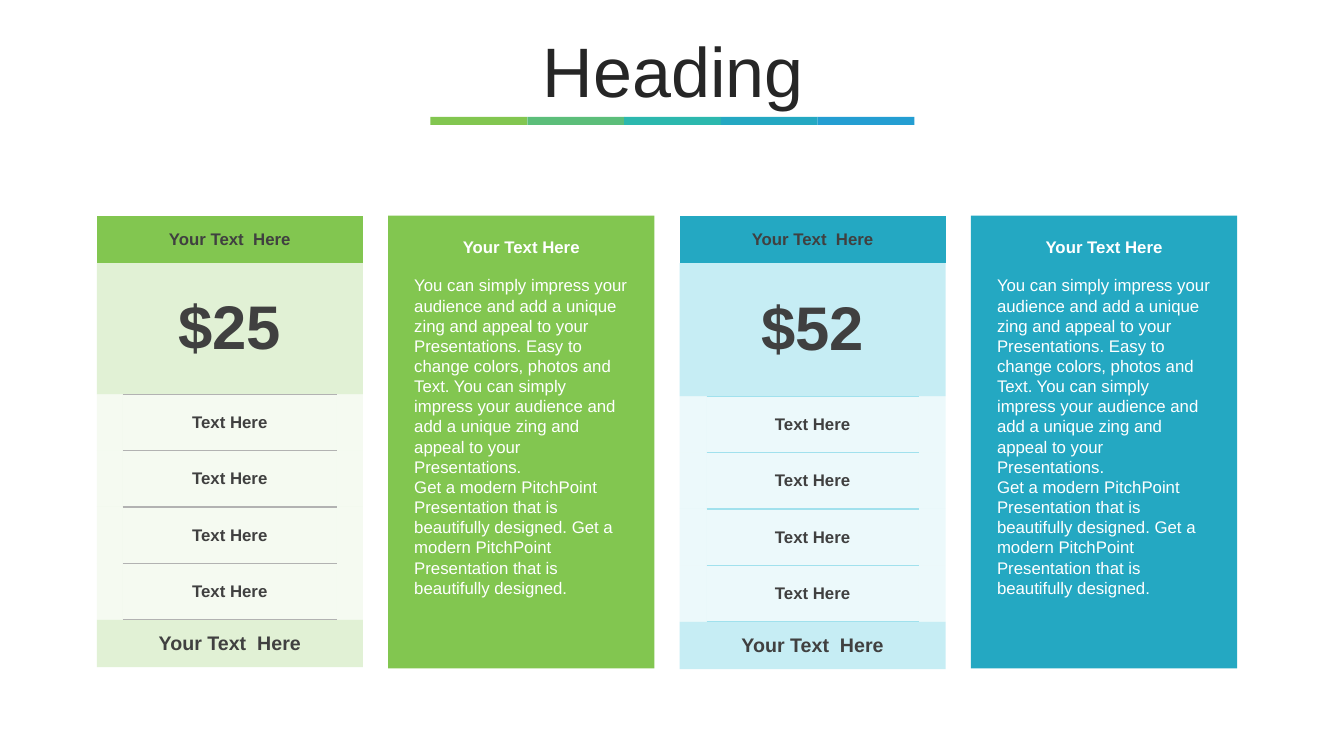
from dataclasses import dataclass

from lxml import etree
from pptx import Presentation
from pptx.dml.color import RGBColor
from pptx.enum.shapes import MSO_SHAPE
from pptx.enum.text import MSO_ANCHOR, MSO_AUTO_SIZE, PP_ALIGN
from pptx.oxml.ns import qn
from pptx.util import Inches, Pt

RECTANGLE = MSO_SHAPE.RECTANGLE
MIDDLE = MSO_ANCHOR.MIDDLE
LEFT, CENTER = PP_ALIGN.LEFT, PP_ALIGN.CENTER
NO_FIT, GROW = MSO_AUTO_SIZE.NONE, MSO_AUTO_SIZE.SHAPE_TO_FIT_TEXT

FONT = "Arial"
WHITE = RGBColor(0xFF, 0xFF, 0xFF)
TITLE_GRAY = RGBColor(0x26, 0x26, 0x26)
TEXT_GRAY = RGBColor(0x40, 0x40, 0x40)
RULE_GRAY = RGBColor(0xB2, 0xB2, 0xB2)
GREEN = RGBColor(0x82, 0xC6, 0x50)
MID_GREEN = RGBColor(0xB4, 0xDD, 0x96)
PALE_GREEN = RGBColor(0xCD, 0xE8, 0xB9)
CYAN = RGBColor(0x24, 0xA8, 0xC2)
MID_CYAN = RGBColor(0x71, 0xD2, 0xE5)
PALE_CYAN = RGBColor(0xA1, 0xE1, 0xED)
BAR_COLORS = (GREEN, RGBColor(0x5C, 0xBE, 0x7A), RGBColor(0x2C, 0xB8, 0xAE),
              CYAN, RGBColor(0x24, 0x9E, 0xD2))

# Layout in inches
BAR_LEFT, BAR_TOP, BAR_WIDTH, BAR_HEIGHT = 4.27, 1.16, 0.96, 0.08
COLUMN_LEFT, COLUMN_PITCH = 0.96, 2.89
COLUMN_TOP, COLUMN_WIDTH, COLUMN_HEIGHT = 2.14, 2.64, 4.49
TEXT_INSET, TEXT_WIDTH = 0.16, 2.32
BAND_HEIGHT, FEATURE_HEIGHT, FEATURE_COUNT = 0.47, 0.56, 4

NO_STYLE_NO_GRID = "{2D5ABB26-0587-4C30-8999-92F81FD0307C}"
CARD_TEXT = [
    "You can simply impress your audience and add a unique zing and appeal to your "
    "Presentations. Easy to change colors, photos and Text. You can simply impress your "
    "audience and add a unique zing and appeal to your Presentations.",
    "Get a modern PitchPoint  Presentation that is beautifully designed. "
    "Get a modern PitchPoint  Presentation that is beautifully designed.",
]


@dataclass
class Plan:
    price: str
    main: RGBColor
    middle: RGBColor
    pale: RGBColor
    rule: RGBColor
    price_height: float
    margin_width: float


PLANS = [
    Plan("$25", GREEN, MID_GREEN, PALE_GREEN, RULE_GRAY, 1.3, 0.26),
    Plan("$52", CYAN, MID_CYAN, PALE_CYAN, PALE_CYAN, 1.32, 0.27),
]


def write_text(frame, *texts: str, size: float = 12, color: RGBColor = TEXT_GRAY,
               bold: bool = False, align=CENTER) -> None:
    for index, text in enumerate(texts):
        paragraph = frame.add_paragraph() if index else frame.paragraphs[0]
        paragraph.alignment = align
        run = paragraph.add_run()
        run.text = text
        run.font.name = FONT
        run.font.size = Pt(size)
        run.font.bold = bold
        run.font.color.rgb = color


def add_rectangle(slide, left: float, top: float, width: float, height: float,
                  color: RGBColor) -> None:
    shape = slide.shapes.add_shape(RECTANGLE, Inches(left), Inches(top),
                                   Inches(width), Inches(height))
    shape.shadow.inherit = False
    shape.fill.solid()
    shape.fill.fore_color.rgb = color
    shape.line.fill.background()


def add_text_box(slide, left: float, top: float, width: float, height: float,
                 *texts: str, **text_format) -> None:
    box = slide.shapes.add_textbox(Inches(left), Inches(top), Inches(width), Inches(height))
    box.text_frame.word_wrap = True
    box.text_frame.auto_size = GROW
    write_text(box.text_frame, *texts, **text_format)


def fill_cell(cell, color: RGBColor, opacity: int = 100) -> None:
    cell.fill.solid()
    cell.fill.fore_color.rgb = color
    if opacity < 100:
        color_element = cell._tc.tcPr.find(f"{qn('a:solidFill')}/{qn('a:srgbClr')}")
        etree.SubElement(color_element, qn("a:alpha"), val=str(opacity * 1000))


def set_borders(cell, color: RGBColor, sides: list[str]) -> None:
    """Border lines come before the fill in the cell properties."""
    for position, side in enumerate(sides):
        line = etree.Element(qn(f"a:{side}"), w=str(Pt(1)))
        fill = etree.SubElement(line, qn("a:solidFill"))
        etree.SubElement(fill, qn("a:srgbClr"), val=str(color))
        cell._tc.tcPr.insert(position, line)


def add_band(table, row: int, text: str, color: RGBColor, opacity: int, size: float) -> None:
    cell = table.cell(row, 0)
    cell.merge(table.cell(row, 2))
    cell.vertical_anchor = MIDDLE
    write_text(cell.text_frame, text, size=size, bold=True)
    fill_cell(cell, color, opacity)


def add_plan_table(slide, left: float, plan: Plan) -> None:
    heights = [BAND_HEIGHT, plan.price_height,
               *[FEATURE_HEIGHT] * FEATURE_COUNT, BAND_HEIGHT]
    widths = [plan.margin_width, COLUMN_WIDTH - 2 * plan.margin_width, plan.margin_width]
    table = slide.shapes.add_table(len(heights), len(widths), Inches(left), Inches(COLUMN_TOP),
                                   Inches(COLUMN_WIDTH), Inches(COLUMN_HEIGHT)).table
    table.first_row = table.horz_banding = False
    table._tbl.tblPr.find(qn("a:tableStyleId")).text = NO_STYLE_NO_GRID
    for row, height in zip(table.rows, heights):
        row.height = Inches(height)
    for column, width in zip(table.columns, widths):
        column.width = Inches(width)

    add_band(table, 0, "Your Text  Here", plan.main, 100, 12)
    add_band(table, 1, plan.price, plan.middle, 40, 44)
    for row in range(2, 2 + FEATURE_COUNT):
        for column in range(len(widths)):
            fill_cell(table.cell(row, column), plan.pale, 20)
        feature = table.cell(row, 1)
        feature.vertical_anchor = MIDDLE
        write_text(feature.text_frame, "Text Here", bold=True)
        is_last = row == 1 + FEATURE_COUNT
        set_borders(feature, plan.rule, ["lnT"] if is_last else ["lnT", "lnB"])
    add_band(table, len(heights) - 1, "Your Text  Here", plan.middle, 40, 14)


def add_card(slide, left: float, color: RGBColor) -> None:
    add_rectangle(slide, left, COLUMN_TOP, COLUMN_WIDTH, COLUMN_HEIGHT, color)
    text_left = left + TEXT_INSET
    add_text_box(slide, text_left, 2.3, TEXT_WIDTH, 0.3, "Your Text Here",
                 color=WHITE, bold=True)
    add_text_box(slide, text_left, 2.68, TEXT_WIDTH, 3.13, *CARD_TEXT,
                 color=WHITE, align=LEFT)


def add_heading(slide) -> None:
    title = slide.shapes.title
    title.left, title.top = Inches(0.35), Inches(0.37)
    title.width, title.height = Inches(12.66), Inches(0.79)
    frame = title.text_frame
    frame.auto_size = NO_FIT
    frame.vertical_anchor = MIDDLE
    write_text(frame, "Heading", size=50, color=TITLE_GRAY)
    frame.paragraphs[0].line_spacing = 0.8
    frame.paragraphs[0].space_before = Pt(10)


def main() -> None:
    presentation = Presentation()
    presentation.slide_width = Inches(13.33)
    presentation.slide_height = Inches(7.5)
    slide = presentation.slides.add_slide(presentation.slide_layouts[5])

    # Heading and its colour bar
    for index, color in enumerate(BAR_COLORS):
        add_rectangle(slide, BAR_LEFT + index * BAR_WIDTH, BAR_TOP,
                      BAR_WIDTH, BAR_HEIGHT, color)
    add_heading(slide)

    # Each plan is a price table followed by a description card
    for index, plan in enumerate(PLANS):
        table_left = COLUMN_LEFT + 2 * index * COLUMN_PITCH
        add_plan_table(slide, table_left, plan)
        add_card(slide, table_left + COLUMN_PITCH, plan.main)

    presentation.save("out.pptx")


if __name__ == "__main__":
    main()
